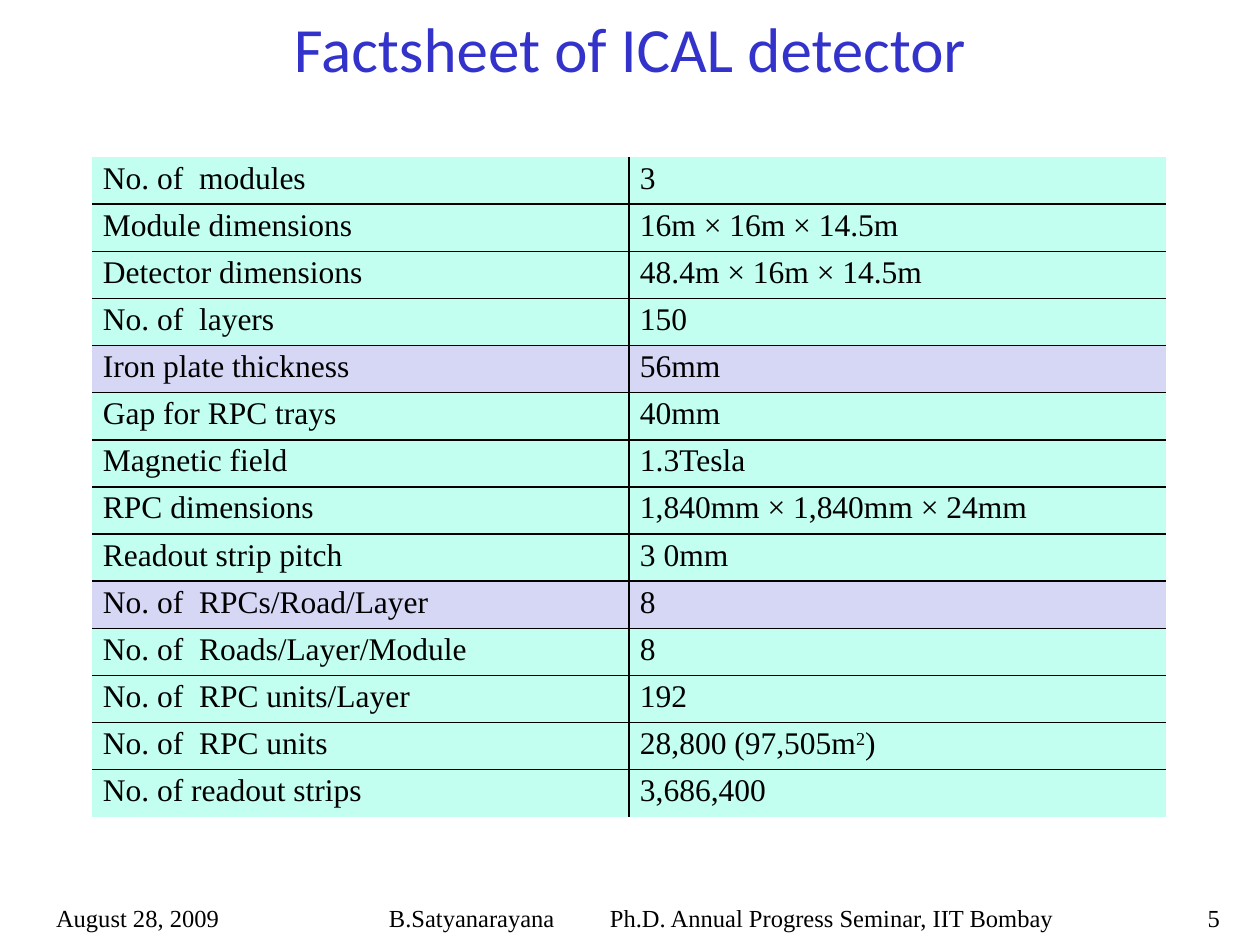
from lxml.etree import SubElement as Sub
from pptx import Presentation
from pptx.dml.color import RGBColor as Rgb
from pptx.enum.text import MSO_ANCHOR as Anchor, PP_ALIGN as Align
from pptx.oxml.ns import qn
from pptx.util import Emu, Pt

COLORS = {"title": "3333CC", "text": "000000", "line": "000000",
          "mint": "C2FFF0", "lilac": "D6D6F5"}
SERIF = "Times New Roman"
MARKED = {"Iron plate thickness", "No. of  RPCs/Road/Layer"}
FACTS = [
    ("No. of  modules", "3"),
    ("Module dimensions", "16m × 16m × 14.5m"),
    ("Detector dimensions", "48.4m × 16m × 14.5m"),
    ("No. of  layers", "150"),
    ("Iron plate thickness", "56mm"),
    ("Gap for RPC trays", "40mm"),
    ("Magnetic field", "1.3Tesla"),
    ("RPC dimensions", "1,840mm × 1,840mm × 24mm"),
    ("Readout strip pitch", "3 0mm"),
    ("No. of  RPCs/Road/Layer", "8"),
    ("No. of  Roads/Layer/Module", "8"),
    ("No. of  RPC units/Layer", "192"),
    ("No. of  RPC units", "28,800 (97,505m^2^)"),
    ("No. of readout strips", "3,686,400"),
]


def px(n):
    return Emu(round(n * 914400 / 126))


def style(run, size, color="text", face=SERIF):
    run.font.size = Pt(size)
    run.font.name = face
    run.font.color.rgb = Rgb.from_string(COLORS[color])


def add_text(slide, box, text, size=14, align=Align.LEFT, **look):
    frame = slide.shapes.add_textbox(*map(px, box)).text_frame
    frame.word_wrap = True
    frame.vertical_anchor = Anchor.MIDDLE
    para = frame.paragraphs[0]
    para.text = text
    para.alignment = align
    for run in para.runs:
        style(run, size, **look)
    return frame


def add_tab(para, pos):
    tabs = Sub(para._p.get_or_add_pPr(), qn("a:tabLst"))
    Sub(tabs, qn("a:tab"), pos=str(px(pos)), algn="l")


def add_edge(cell, side, shown):
    line = Sub(cell._tc.get_or_add_tcPr(), qn("a:ln" + side), w=str(Pt(1)))
    if shown:
        fill = Sub(line, qn("a:solidFill"))
        Sub(fill, qn("a:srgbClr"), val=COLORS["line"])
    else:
        Sub(line, qn("a:noFill"))


def fill_cell(cell, text, color):
    cell.margin_left = cell.margin_right = px(11)
    cell.margin_top = cell.margin_bottom = px(4)
    cell.fill.solid()
    cell.fill.fore_color.rgb = Rgb.from_string(COLORS[color])
    para = cell.text_frame.paragraphs[0]
    space = Sub(para._p.get_or_add_pPr(), qn("a:spcBef"))
    Sub(space, qn("a:spcPct"), val="20000")
    # Text between carets is raised
    for i, part in enumerate(text.split("^")):
        run = para.add_run()
        run.text = part
        style(run, 18)
        if i % 2:
            run._r.get_or_add_rPr().set("baseline", "30000")


def add_facts(slide, box, facts):
    rows, cols = len(facts), len(facts[0])
    table = slide.shapes.add_table(rows, cols, *map(px, box)).table
    table.first_row = table.horz_banding = False
    for row in table.rows:
        row.height = px(box[3] / rows)
    for r, fact in enumerate(facts):
        color = "lilac" if fact[0] in MARKED else "mint"
        for c, text in enumerate(fact):
            cell = table.cell(r, c)
            # Only the inner grid lines show
            inner = {"L": c > 0, "R": c < cols - 1,
                     "T": r > 0, "B": r < rows - 1}
            for side, shown in inner.items():
                add_edge(cell, side, shown)
            fill_cell(cell, text, color)


def main():
    deck = Presentation()
    deck.slide_width, deck.slide_height = px(1260), px(945)
    slide = deck.slides.add_slide(deck.slide_layouts[6])

    # Title
    add_text(slide, (10, 5, 1240, 84), "Factsheet of ICAL detector", 36,
             Align.CENTER, color="title", face="Calibri")

    # Table of facts
    add_facts(slide, (92, 157, 1074, 660), FACTS)

    # Footer: date, speaker and event, page number
    top, high = 896, 44
    date = add_text(slide, (10, top, 256, high), "August 28, 2009")
    date.margin_left = px(46)
    event = add_text(slide, (276, top, 893, high),
                     "B.Satyanarayana\tPh.D. Annual Progress Seminar, IIT Bombay")
    event.margin_left = px(113)
    add_tab(event.paragraphs[0], 221)
    page = add_text(slide, (1177, top, 73, high), "5", align=Align.RIGHT)
    page.margin_right = px(30)

    deck.save("out.pptx")


if __name__ == "__main__":
    main()
